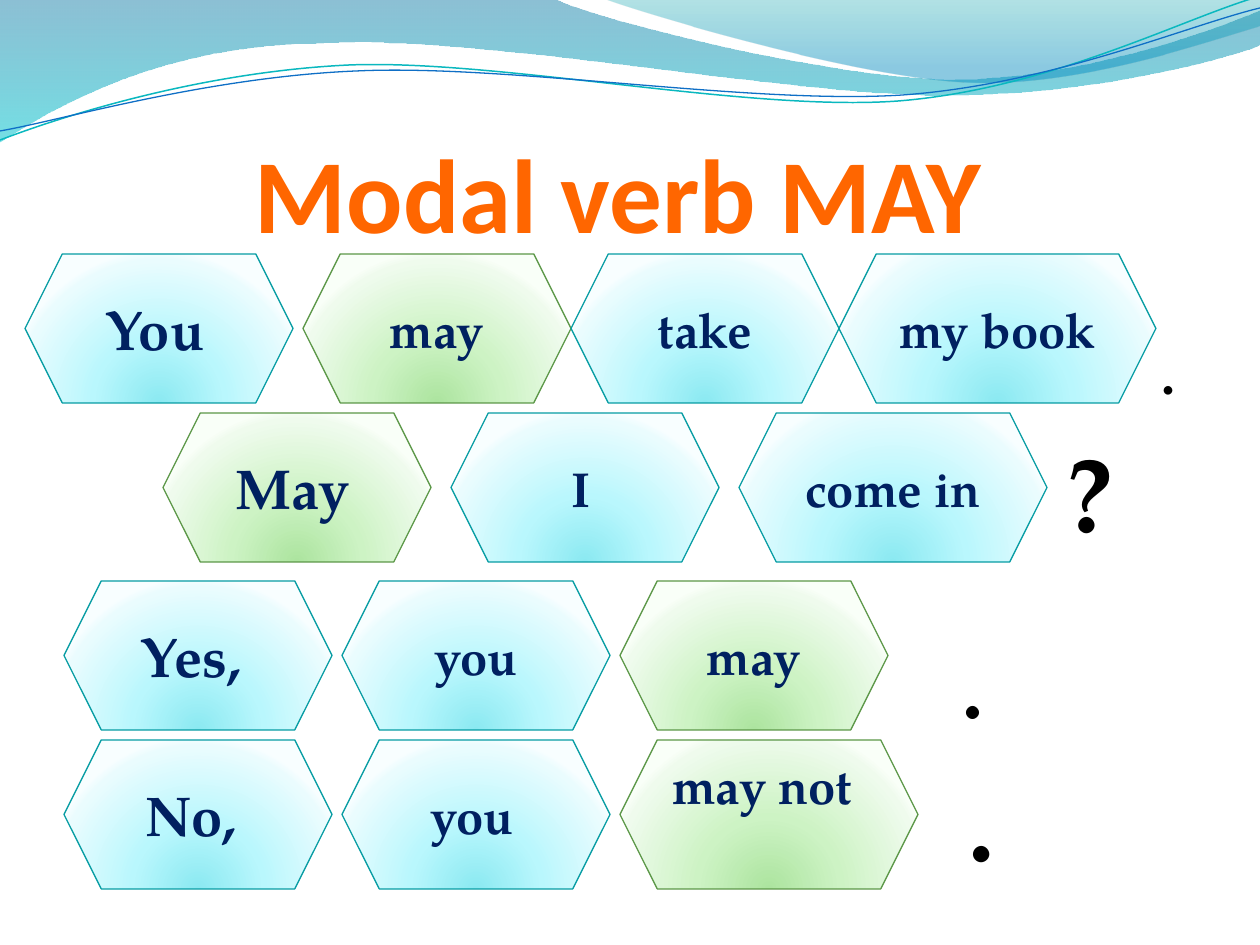
import pptx
import pptx.dml.color
import pptx.enum.shapes
import pptx.enum.text
import pptx.oxml
import pptx.oxml.ns
import pptx.util

RGBColor = pptx.dml.color.RGBColor
Anchor = pptx.enum.text.MSO_ANCHOR
Align = pptx.enum.text.PP_ALIGN

EMU_PER_PX = 914400 / 126
NAMESPACE = pptx.oxml.ns.nsdecls("a")
ORANGE = RGBColor(0xFF, 0x66, 0x00)
NAVY = RGBColor(0x00, 0x20, 0x60)
BLACK = RGBColor(0x00, 0x00, 0x00)
TEAL = RGBColor(0x06, 0x9C, 0xA3)
GREEN = RGBColor(0x5B, 0x97, 0x47)
WAVE_TEAL = RGBColor(0x0A, 0xB8, 0xBF)
WAVE_BLUE = RGBColor(0x0F, 0x6F, 0xC6)

# Gradient stops: position %, colour, opacity %
DEEP_WAVE = [(0, RGBColor(0x00, 0x74, 0xA1), 45), (100, RGBColor(0x00, 0xC6, 0xCF), 55)]
LIGHT_WAVE = [(0, RGBColor(0x00, 0xA1, 0xA9), 30), (80, RGBColor(0x00, 0x8B, 0xBF), 45)]
GLOWS = {
    TEAL: [(0, RGBColor(0x8B, 0xE9, 0xF1), 100), (43, RGBColor(0xB9, 0xF7, 0xFD), 100),
           (93, RGBColor(0xEA, 0xFC, 0xFE), 100), (100, RGBColor(0xF8, 0xFE, 0xFF), 100)],
    GREEN: [(0, RGBColor(0xAC, 0xE4, 0x9F), 100), (43, RGBColor(0xCD, 0xF3, 0xC4), 100),
            (93, RGBColor(0xEF, 0xFB, 0xED), 100), (100, RGBColor(0xF9, 0xFF, 0xF8), 100)],
}
DOWNWARD = '<a:lin ang="5400000" scaled="0"/>'
FROM_BELOW = ('<a:path path="circle"><a:fillToRect l="50000" t="130000" '
              'r="50000" b="-30000"/></a:path>')


def px(length):
    return pptx.util.Emu(round(length * EMU_PER_PX))


def write(paragraph, text, size, color, font="TeX Gyre Pagella", align=Align.CENTER):
    paragraph.alignment = align
    run = paragraph.add_run()
    run.text = text
    run.font.size = pptx.util.Pt(size)
    run.font.name = font
    run.font.bold = True
    run.font.color.rgb = color


def set_margins(frame, left=0, top=0, right=0, bottom=0):
    frame.margin_left, frame.margin_top = px(left), px(top)
    frame.margin_right, frame.margin_bottom = px(right), px(bottom)


def fill_gradient(shape, stops, direction):
    stop_xml = "".join(
        f'<a:gs pos="{position * 1000}"><a:srgbClr val="{color}">'
        f'<a:alpha val="{opacity * 1000}"/></a:srgbClr></a:gs>'
        for position, color, opacity in stops)
    gradient = pptx.oxml.parse_xml(
        f'<a:gradFill {NAMESPACE} rotWithShape="1">'
        f'<a:gsLst>{stop_xml}</a:gsLst>{direction}</a:gradFill>')
    # The fill follows the position and the geometry
    shape._element.spPr.insert(2, gradient)


def bend_segments(shape, segments):
    """Turn the straight segments that have control points into cubic curves."""
    lines = list(shape._element.spPr.iter(pptx.oxml.ns.qn("a:lnTo")))
    for line, segment in zip(lines, segments):
        if len(segment) == 6:
            points = "".join(
                f'<a:pt x="{px(x) - shape.left}" y="{px(y) - shape.top}"/>'
                for x, y in zip(segment[::2], segment[1::2]))
            curve = pptx.oxml.parse_xml(
                f'<a:cubicBezTo {NAMESPACE}>{points}</a:cubicBezTo>')
            line.getparent().replace(line, curve)


class LessonSlide:
    hexagon_width = 268
    hexagon_height = 149

    def __init__(self, presentation):
        self.slide = presentation.slides.add_slide(presentation.slide_layouts[1])
        self.shapes = self.slide.shapes

    def place(self, shape, left, top, width, height):
        shape.left, shape.top = px(left), px(top)
        shape.width, shape.height = px(width), px(height)

    def wave(self, start, segments, stops=None, line=None, weight=0.75):
        """Segments are line ends (x, y) or cubic curves (x1, y1, x2, y2, x, y)."""
        builder = self.shapes.build_freeform(px(start[0]), px(start[1]))
        ends = [(px(segment[-2]), px(segment[-1])) for segment in segments]
        builder.add_line_segments(ends, close=stops is not None)
        shape = builder.convert_to_shape()
        bend_segments(shape, segments)
        if stops:
            fill_gradient(shape, stops, DOWNWARD)
            shape.line.fill.background()
        else:
            shape.fill.background()
            shape.line.color.rgb = line
            shape.line.width = pptx.util.Pt(weight)
        shape.shadow.inherit = False

    def title(self, text):
        shape = self.shapes.title
        self.place(shape, 63, 97, 1134, 158)
        frame = shape.text_frame
        frame.auto_size = pptx.enum.text.MSO_AUTO_SIZE.NONE
        frame.vertical_anchor = Anchor.BOTTOM
        set_margins(frame, top=6)
        write(frame.paragraphs[0], text, 60, ORANGE, font="Calibri")

    def sentence_marks(self, marks, left, top):
        """One mark per line: text, x, size, line height and space before in points."""
        shape = self.slide.placeholders[1]
        self.place(shape, left, top, 1172, 945 - top)
        frame = shape.text_frame
        frame.auto_size = pptx.enum.text.MSO_AUTO_SIZE.NONE
        frame.vertical_anchor = Anchor.TOP
        set_margins(frame)
        for index, (text, x, size, height, before) in enumerate(marks):
            paragraph = frame.add_paragraph() if index else frame.paragraphs[0]
            write(paragraph, text, size, BLACK, align=Align.LEFT)
            paragraph.line_spacing = pptx.util.Pt(height)
            paragraph.space_before = pptx.util.Pt(before)
            properties = paragraph._p.get_or_add_pPr()
            properties.set("marL", str(px(x - left)))
            properties.set("indent", "0")
            properties.append(pptx.oxml.parse_xml(f'<a:buNone {NAMESPACE}/>'))

    def hexagon(self, left, top, text, color, size=28, width=hexagon_width, shift=0, lift=0):
        shape = self.shapes.add_shape(
            pptx.enum.shapes.MSO_SHAPE.HEXAGON,
            px(left), px(top), px(width), px(self.hexagon_height))
        fill_gradient(shape, GLOWS[color], FROM_BELOW)
        shape.line.color.rgb = color
        shape.line.width = pptx.util.Pt(0.75)
        shape.shadow.inherit = False
        frame = shape.text_frame
        frame.word_wrap = True
        frame.vertical_anchor = Anchor.MIDDLE
        set_margins(frame, right=2 * shift, bottom=2 * lift)
        write(frame.paragraphs[0], text, size, NAVY)

    def hexagon_row(self, left, top, gap, words):
        for word in words:
            self.hexagon(left, top, **word)
            left += word.get("width", self.hexagon_width) + gap


def main():
    presentation = pptx.Presentation()
    presentation.slide_width, presentation.slide_height = px(1260), px(945)
    lesson = LessonSlide(presentation)

    # Waves along the top
    lesson.wave((0, -1), [
        (554, -1), (600, 21, 837, 79, 955, 79), (1075, 79, 1207, 33, 1260, 11),
        (1261, 45), (1239, 55, 1096, 96, 940, 95), (784, 95, 481, 35, 324, 43),
        (163, 44, 58, 105, -1, 142)], stops=DEEP_WAVE)
    lesson.wave((604, -1), [
        (643, 14, 859, 78, 969, 82), (1079, 87, 1211, 40, 1260, 26), (1260, 0)],
        stops=LIGHT_WAVE)
    lesson.wave((0, 140), [
        (60, 117, 199, 72, 349, 65), (498, 59, 747, 112, 898, 101),
        (1049, 89, 1182, 19, 1257, -3)], line=WAVE_TEAL, weight=0.85)
    lesson.wave((0, 131), [
        (59, 121, 207, 77, 357, 71), (508, 64, 752, 105, 903, 95),
        (1053, 84, 1186, 26, 1260, 8)], line=WAVE_BLUE)

    # Title and the closing marks of the sentences
    lesson.title("Modal verb MAY ")
    lesson.sentence_marks([
        (".", 1162, 32, 40, 0), ("?", 1067, 60, 75, 9),
        (".", 962, 48, 60, 44), (".", 968, 60, 75, 9)], left=63, top=336)

    # Sentences, one word per hexagon
    you = dict(text="you", color=TEAL)
    may = dict(text="may", color=GREEN)
    lesson.hexagon_row(25, 254, 0, [dict(text="You", color=TEAL, size=32, shift=4)])
    lesson.hexagon_row(303, 254, 0, [
        may, dict(text="take", color=TEAL), dict(text="my book", color=TEAL, width=317)])
    lesson.hexagon_row(163, 413, 20, [
        dict(text="May", color=GREEN, size=32, shift=4), dict(text="I", color=TEAL, shift=4),
        dict(text="come in", color=TEAL, width=308)])
    lesson.hexagon_row(64, 581, 10, [
        dict(text="Yes,", color=TEAL, size=32, shift=7), you, may])
    lesson.hexagon_row(64, 740, 10, [
        dict(text="No,", color=TEAL, size=32, shift=7), dict(you, shift=4),
        dict(text="may not", color=GREEN, width=298, shift=7, lift=30)])

    presentation.save("out.pptx")


if __name__ == "__main__":
    main()
